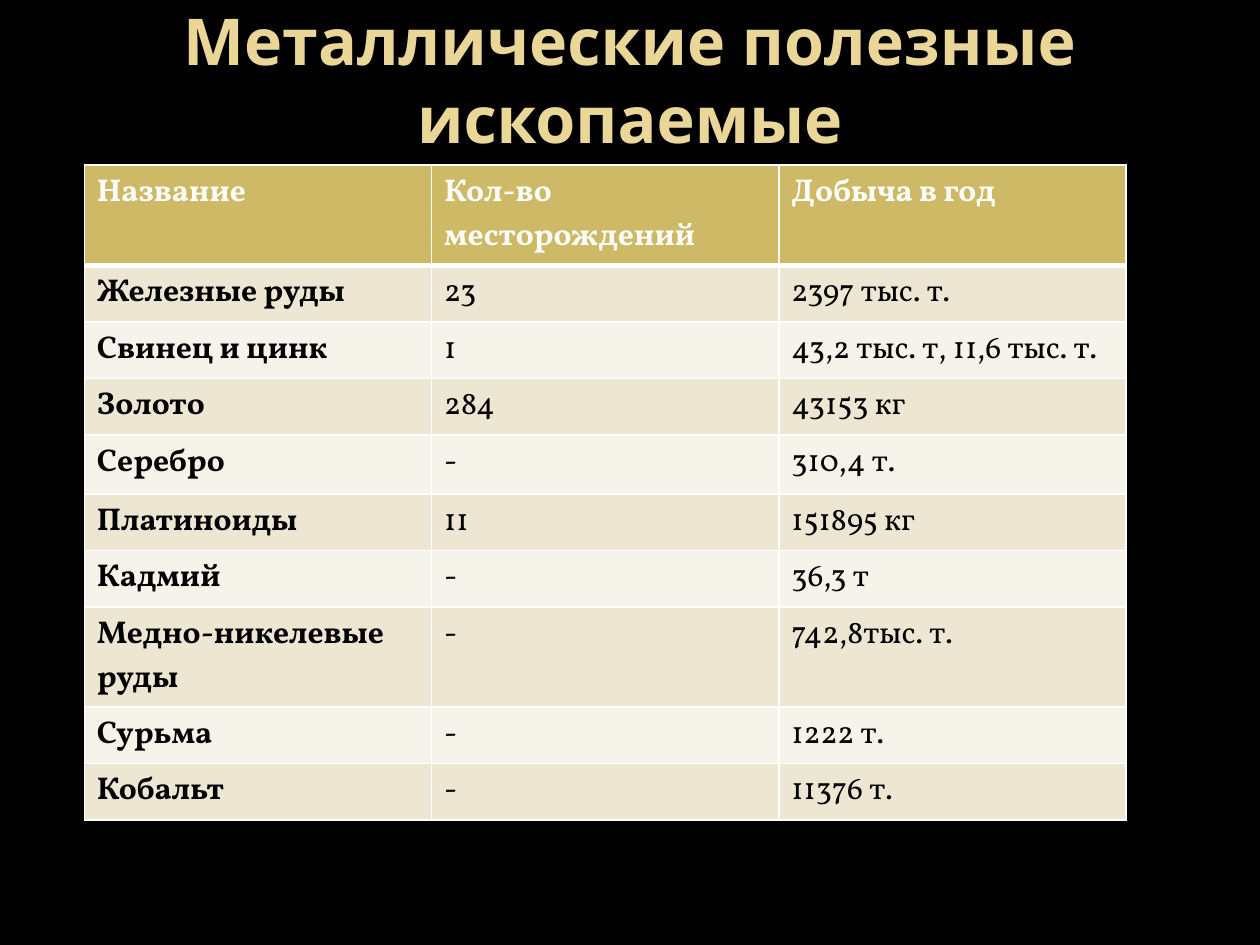
from lxml import etree
from pptx import Presentation
from pptx import util as u
from pptx.dml.color import RGBColor
from pptx.enum import text
from pptx.oxml import ns

COLORS = {
    "background": "000000",
    "title": "EAD696",
    "header": "CEB966",
    "odd_row": "EDE6D3",
    "even_row": "F6F3EA",
    "white": "FFFFFF",
    "ink": "000000",
}
TITLE_FONT, TABLE_FONT = "Open Sans", "Vollkorn"
ROW_HEIGHT = 1.14
SPECIAL_HEIGHTS = {"Название": 2.02, "Серебро": 1.19, "Медно-никелевые руды": 2.02}

HEADINGS = ("Название", "Кол-во месторождений", "Добыча в год")
MINERALS = [
    ("Железные руды", "23", "2397 тыс. т."),
    ("Свинец и цинк", "1", "43,2 тыс. т, 11,6 тыс. т."),
    ("Золото", "284", "43153 кг"),
    ("Серебро", "-", "310,4 т."),
    ("Платиноиды", "11", "151895 кг"),
    ("Кадмий", "-", "36,3 т"),
    ("Медно-никелевые руды", "-", "742,8тыс. т."),
    ("Сурьма", "-", "1222 т."),
    ("Кобальт", "-", "11376 т."),
]


def rgb(name):
    return RGBColor.from_string(COLORS[name])


def add_run(paragraph, wording, font, size, color, bold):
    run = paragraph.add_run()
    run.text = wording
    run.font.name = font
    run.font.size = u.Pt(size)
    run.font.bold = bold
    run.font.color.rgb = rgb(color)


def set_borders(cell, top, bottom):
    """Draw white cell edges; top and bottom widths are in points."""
    properties = cell._tc.get_or_add_tcPr()
    for side, width in (("L", 1), ("R", 1), ("T", top), ("B", bottom)):
        edge = etree.SubElement(properties, ns.qn(f"a:ln{side}"), w=str(u.Pt(width)))
        fill = etree.SubElement(edge, ns.qn("a:solidFill"))
        etree.SubElement(fill, ns.qn("a:srgbClr"), val=COLORS["white"])


def add_title(slide, left, top, width, height):
    heading = slide.shapes.add_textbox(
        u.Cm(left), u.Cm(top), u.Cm(width), u.Cm(height)).text_frame
    heading.word_wrap = True
    heading.vertical_anchor = text.MSO_ANCHOR.MIDDLE
    heading.margin_bottom = u.Cm(1.66)
    paragraph = heading.paragraphs[0]
    paragraph.alignment = text.PP_ALIGN.CENTER
    add_run(paragraph, "Металлические полезные ископаемые",
            TITLE_FONT, 36.9, "title", True)


def add_minerals(slide, left, top, width):
    rows = [HEADINGS, *MINERALS]
    heights = [SPECIAL_HEIGHTS.get(row[0], ROW_HEIGHT) for row in rows]
    minerals = slide.shapes.add_table(
        len(rows), len(HEADINGS), u.Cm(left), u.Cm(top),
        u.Cm(width), u.Cm(sum(heights))).table
    minerals.horz_banding = False
    for column in minerals.columns:
        column.width = u.Cm(width / len(HEADINGS))

    for r, (row, height) in enumerate(zip(rows, heights)):
        minerals.rows[r].height = u.Cm(height)
        is_header = r == 0
        band = "header" if is_header else "odd_row" if r % 2 else "even_row"
        for c, wording in enumerate(row):
            cell = minerals.cell(r, c)
            set_borders(cell, top=3 if r == 1 else 1, bottom=3 if is_header else 1)
            cell.fill.solid()
            cell.fill.fore_color.rgb = rgb(band)
            add_run(cell.text_frame.paragraphs[0], wording, TABLE_FONT, 18,
                    "white" if is_header else "ink", is_header or c == 0)


def main():
    deck = Presentation()
    deck.slide_width, deck.slide_height = u.Cm(25.4), u.Cm(19.05)
    slide = deck.slides.add_slide(deck.slide_layouts[6])
    slide.background.fill.solid()
    slide.background.fill.fore_color.rgb = rgb("background")
    add_title(slide, 1.27, 0.76, 22.86, 3.18)
    add_minerals(slide, 1.7, 3.33, 21)
    deck.save("out.pptx")


if __name__ == "__main__":
    main()
